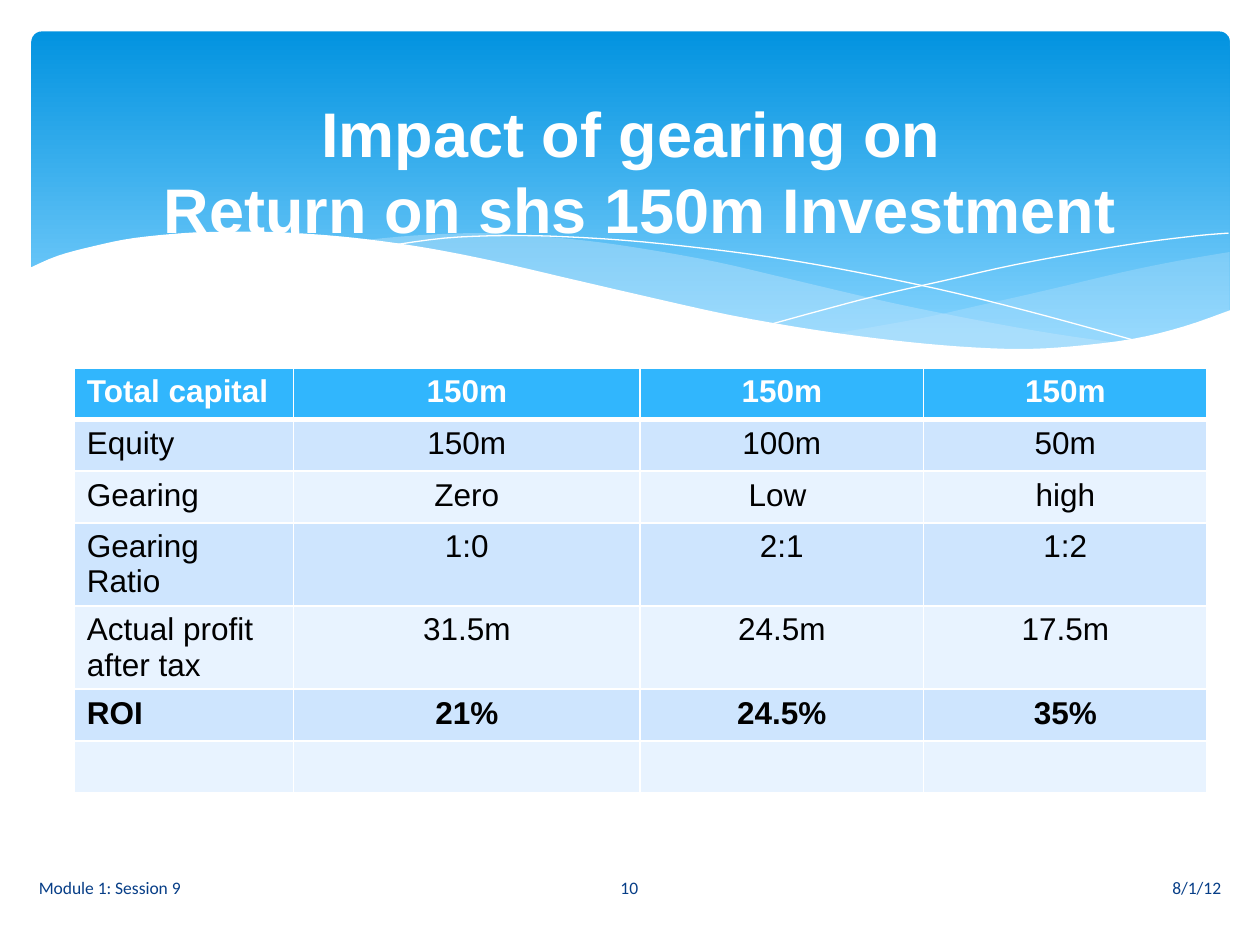
from lxml import etree
from pptx import Presentation
from pptx import util as u
from pptx.dml.color import RGBColor
from pptx.enum import shapes, text
from pptx.oxml import ns

COLORS = {
    "white": "FFFFFF", "black": "000000", "navy": "073E87",
    "sky_top": "0293E0", "sky_bottom": "83D3FE", "haze": "C6E7FC",
    "header": "31B6FD", "band": "CEE5FE", "pale": "E8F3FF",
}
LEFT, CENTER, RIGHT = text.PP_ALIGN.LEFT, text.PP_ALIGN.CENTER, text.PP_ALIGN.RIGHT

RIGHT_VEIL = [
    [(9.76, 2), (9.35, 2.07), (8.91, 2.16), (8.32, 2.3), (7.79, 2.42), (7.29, 2.53), (6.61, 2.65)],
    [(6.61, 2.65), (7.05, 2.71), (7.57, 2.76), (8.03, 2.78), (8.54, 2.76), (8.97, 2.7),
     (9.35, 2.62), (9.76, 2.47)],
]
LONG_VEIL = [
    [(8.93, 2.73), (8.37, 2.65), (7.75, 2.54), (7.06, 2.4), (6.29, 2.22), (5.69, 2.08),
     (5.14, 1.98), (4.65, 1.91), (4.2, 1.87), (3.8, 1.85), (3.28, 1.87), (2.86, 1.91)],
    [(2.86, 1.91), (3.42, 1.99), (4.04, 2.11), (4.49, 2.22), (5.3, 2.4), (6.01, 2.55),
     (6.65, 2.66), (7.22, 2.74), (7.73, 2.77), (8.18, 2.78), (8.57, 2.77), (8.93, 2.73)],
]
FALLING_LINE = [[
    (3.09, 1.95), (3.53, 1.89), (4.01, 1.87), (4.5, 1.88), (5.1, 1.92), (5.82, 2),
    (6.36, 2.08), (6.95, 2.19), (7.6, 2.33), (8.31, 2.51), (9.07, 2.72),
]]
RISING_LINE = [[
    (6.13, 2.57), (6.53, 2.46), (6.95, 2.35), (7.48, 2.23), (8.06, 2.1), (8.66, 1.99),
    (9.1, 1.92), (9.51, 1.87), (9.75, 1.85),
]]
WHITE_WAVE = [
    [(9.77, 2.46), (9.4, 2.59), (8.99, 2.69), (8.5, 2.75), (8.09, 2.77), (7.61, 2.75),
     (7.08, 2.7), (6.48, 2.62), (5.79, 2.5), (5.03, 2.33), (4.47, 2.2), (3.91, 2.07),
     (3.4, 1.97), (2.92, 1.9), (2.5, 1.86), (2.11, 1.84), (1.77, 1.84), (1.46, 1.85),
     (1.06, 1.89), (0.76, 1.95), (0.46, 2.03), (0.23, 2.13)],
    [(0.23, 3.29)], [(9.77, 3.29)],
]

TABLE_ROWS = [
    ["Total capital", "150m", "150m", "150m"],
    ["Equity", "150m", "100m", "50m"],
    ["Gearing", "Zero", "Low ", "high"],
    ["Gearing Ratio", "1:0", "2:1", "1:2"],
    ["Actual profit after tax", "31.5m", "24.5m", "17.5m"],
    ["ROI", "21%", "24.5%", "35%"],
    [""] * 4,
]


def rgb(name):
    return RGBColor.from_string(COLORS[name])


def smooth(knots, steps=4):
    padded = [knots[0], *knots, knots[-1]]
    points = [knots[0]]
    for a, b, c, d in zip(padded, padded[1:], padded[2:], padded[3:]):
        for step in range(1, steps + 1):
            t = step / steps
            points.append(tuple(
                (2 * q + (r - p) * t + (2 * p - 5 * q + 4 * r - s) * t ** 2
                 + (3 * q - p - 3 * r + s) * t ** 3) / 2
                for p, q, r, s in zip(a, b, c, d)))
    return points


class SlideBuilder:
    def __init__(self, slide):
        self.slide = slide
        self.shapes = slide.shapes

    def style(self, paragraph, size, color, font="Arial", bold=False, align=LEFT):
        paragraph.alignment = align
        paragraph.font.name = font
        paragraph.font.size = u.Pt(size)
        paragraph.font.bold = bold
        paragraph.font.color.rgb = rgb(color)

    def sky(self, left, top, width, height):
        panel = self.shapes.add_shape(
            shapes.MSO_SHAPE.ROUNDED_RECTANGLE,
            *map(u.Inches, (left, top, width, height)))
        panel.adjustments[0] = 0.03
        panel.shadow.inherit = False
        panel.line.fill.background()
        panel.fill.gradient()
        panel.fill.gradient_angle = 270
        stops = zip(panel.fill.gradient_stops, ("sky_top", "sky_bottom"), (0, 0.9))
        for stop, color, position in stops:
            stop.color.rgb = rgb(color)
            stop.position = position

    def curve(self, sections, fill=None, opacity=100):
        points = [(u.Inches(x), u.Inches(y))
                  for knots in sections for x, y in smooth(knots)]
        builder = self.shapes.build_freeform(*points[0])
        builder.add_line_segments(points[1:], close=fill is not None)
        wave = builder.convert_to_shape()
        wave.shadow.inherit = False
        if fill is None:
            wave.fill.background()
            wave.line.color.rgb = rgb("white")
            wave.line.width = u.Pt(0)
            return
        wave.line.fill.background()
        wave.fill.solid()
        wave.fill.fore_color.rgb = rgb(fill)
        if opacity < 100:
            color = wave.fill._xPr.find(".//" + ns.qn("a:srgbClr"))
            etree.SubElement(color, ns.qn("a:alpha"), val=str(opacity * 1000))

    def border(self, cell, side, width):
        line = etree.SubElement(
            cell._tc.get_or_add_tcPr(), ns.qn("a:" + side), w=str(u.Pt(width)))
        fill = etree.SubElement(line, ns.qn("a:solidFill"))
        etree.SubElement(fill, ns.qn("a:srgbClr"), val=COLORS["white"])

    def table(self, rows, left, top, widths, row_height):
        frame = self.shapes.add_table(
            len(rows), len(widths), u.Inches(left), u.Inches(top),
            u.Inches(sum(widths)), u.Inches(row_height * len(rows)))
        table = frame.table
        for column, width in zip(table.columns, widths):
            column.width = u.Inches(width)
        for r, values in enumerate(rows):
            header = r == 0
            fill = "header" if header else ("pale", "band")[r % 2]
            for c, value in enumerate(values):
                cell = table.cell(r, c)
                cell.text = value
                self.style(cell.text_frame.paragraphs[0], 18,
                           "white" if header else "black",
                           bold=header or values[0] == "ROI",
                           align=CENTER if c else LEFT)
                for side in ("lnL", "lnR", "lnT", "lnB"):
                    thick = (r, side) in ((0, "lnB"), (1, "lnT"))
                    self.border(cell, side, 3 if thick else 1)
                cell.fill.solid()
                cell.fill.fore_color.rgb = rgb(fill)

    def footer(self, value, left, width, align):
        box = self.shapes.add_textbox(*map(u.Inches, (left, 6.84, width, 0.4)))
        frame = box.text_frame
        frame.word_wrap = True
        frame.vertical_anchor = text.MSO_ANCHOR.MIDDLE
        frame.text = value
        self.style(frame.paragraphs[0], 10, "navy", font="Calibri", align=align)

    def title(self, value, left, top, width, height):
        title = self.shapes.title
        title.left, title.top, title.width, title.height = map(
            u.Inches, (left, top, width, height))
        frame = title.text_frame
        frame.text = value
        frame.auto_size = text.MSO_AUTO_SIZE.NONE
        frame.vertical_anchor = text.MSO_ANCHOR.MIDDLE
        self.style(frame.paragraphs[0], 36, "white", bold=True, align=CENTER)
        self.shapes._spTree.append(title._element)


def main():
    deck = Presentation()
    deck.slide_width, deck.slide_height = u.Inches(10), u.Inches(7.5)
    page = SlideBuilder(deck.slides.add_slide(deck.slide_layouts[5]))
    page.sky(0.25, 0.25, 9.51, 2.7)
    page.curve(RIGHT_VEIL, "haze", 29)
    page.curve(LONG_VEIL, "haze", 40)
    page.curve(FALLING_LINE)
    page.curve(RISING_LINE)
    page.curve(WHITE_WAVE, "white")
    page.table(TABLE_ROWS, 0.59, 2.92, [1.74, 2.75, 2.25, 2.25], 0.41)
    page.footer("8/1/12", 5.65, 4.14, RIGHT)
    page.footer("Module 1: Session 9", 0.21, 4.14, LEFT)
    page.footer("10", 4.36, 1.27, CENTER)
    page.title("Impact of gearing on\v Return on shs 150m Investment", 0.51, 0.76, 9, 1.18)
    deck.save("out.pptx")


if __name__ == "__main__":
    main()
